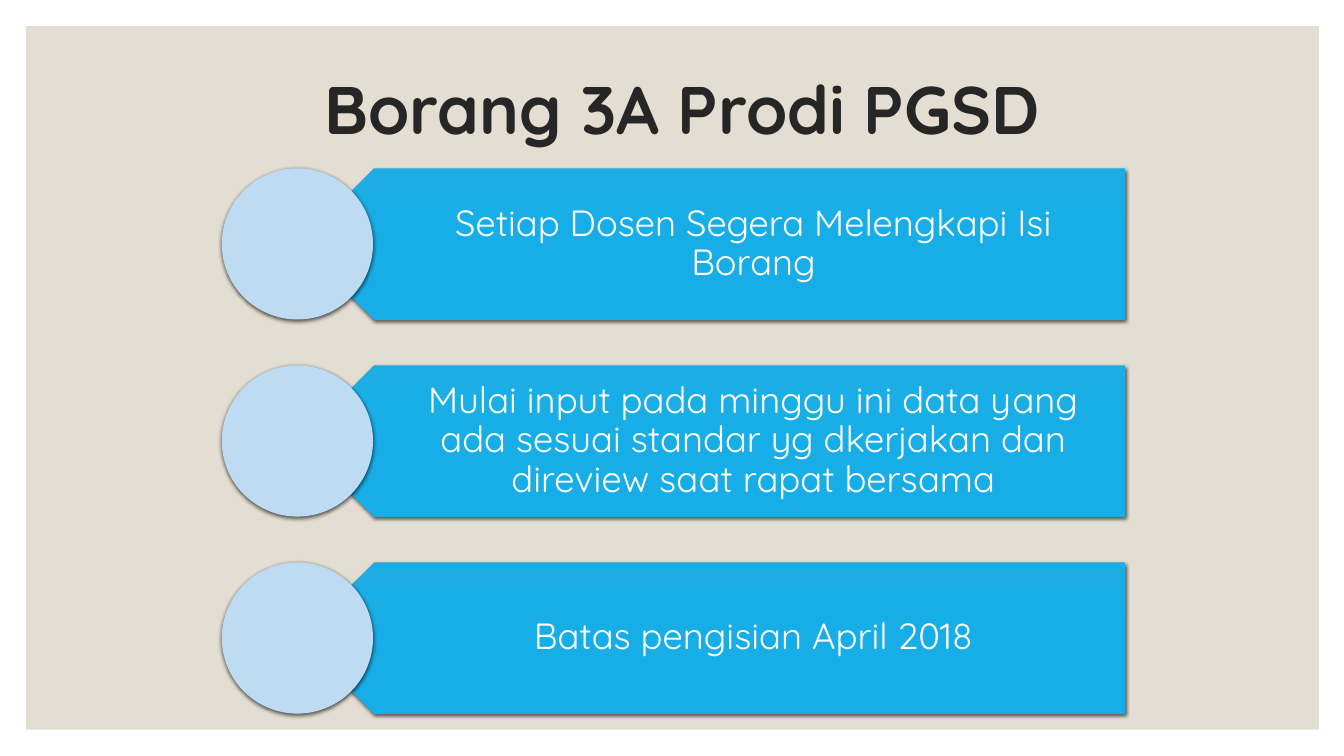
from dataclasses import dataclass

from lxml.etree import SubElement
from pptx import Presentation
from pptx.dml.color import RGBColor
from pptx.enum.shapes import MSO_SHAPE
from pptx.enum.text import MSO_ANCHOR, PP_ALIGN
from pptx.oxml.ns import qn
from pptx.shapes.autoshape import Shape
from pptx.slide import Slide
from pptx.text.text import TextFrame
from pptx.util import Inches, Pt

PANEL = RGBColor(0xE3, 0xDE, 0xD1)
TITLE_INK = RGBColor(0x26, 0x26, 0x26)
BAR_TOP = RGBColor(0x1C, 0xAD, 0xE4)
BAR_BOTTOM = RGBColor(0x17, 0xAE, 0xE8)
CIRCLE = RGBColor(0xBD, 0xDB, 0xF2)
WHITE = RGBColor(0xFF, 0xFF, 0xFF)
FONT = "Quicksand"

FIRST_TOP = 1.67
ROW_PITCH = 1.955
ROW_HEIGHT = 1.5


@dataclass
class Step:
    row: int
    text: str

    @property
    def top(self) -> float:
        return FIRST_TOP + self.row * ROW_PITCH


STEPS = [
    Step(0, "Setiap Dosen Segera Melengkapi Isi Borang"),
    Step(1, "Mulai input pada minggu ini data yang ada sesuai standar yg "
            "dkerjakan dan direview saat rapat bersama"),
    Step(2, "Batas pengisian April 2018"),
]


def add_plain_shape(page: Slide, kind: MSO_SHAPE, left: float, top: float,
                    width: float, height: float) -> Shape:
    shape = page.shapes.add_shape(kind, Inches(left), Inches(top),
                                  Inches(width), Inches(height))
    shape.shadow.inherit = False
    shape.line.fill.background()
    return shape


def add_drop_shadow(shape: Shape) -> None:
    effects = shape._element.spPr.find(qn("a:effectLst"))
    shadow = SubElement(effects, qn("a:outerShdw"), blurRad=str(Pt(3)),
                        dist=str(Pt(1)), dir="5400000", rotWithShape="0")
    color = SubElement(shadow, qn("a:srgbClr"), val="000000")
    SubElement(color, qn("a:alpha"), val="63000")


def write_centred(frame: TextFrame, text: str, size: int, color: RGBColor,
                  bold: bool = False) -> None:
    frame.word_wrap = True
    frame.vertical_anchor = MSO_ANCHOR.MIDDLE
    para = frame.paragraphs[0]
    para.alignment = PP_ALIGN.CENTER
    para.line_spacing = 0.9
    span = para.add_run()
    span.text = text
    span.font.name = FONT
    span.font.size = Pt(size)
    span.font.bold = bold
    span.font.color.rgb = color


def add_panel(page: Slide) -> None:
    """Add the beige panel behind everything else."""
    panel = add_plain_shape(page, MSO_SHAPE.RECTANGLE, 0.26, 0.26, 12.82, 6.98)
    panel.fill.solid()
    panel.fill.fore_color.rgb = PANEL
    page.shapes._spTree.insert(2, panel._element)


def add_title(page: Slide) -> None:
    title = page.shapes.title
    title.left, title.top = Inches(1.17), Inches(0.7)
    title.width, title.height = Inches(11), Inches(0.83)
    write_centred(title.text_frame, " Borang 3A Prodi PGSD", 48, TITLE_INK, bold=True)


def add_step(page: Slide, step: Step) -> None:
    bar = add_plain_shape(page, MSO_SHAPE.PENTAGON, 2.96, step.top, 8.2, ROW_HEIGHT)
    bar.rotation = 180
    bar.fill.gradient()
    bar.fill.gradient_angle = 270
    bar._element.spPr.find(qn("a:gradFill")).set("rotWithShape", "0")
    start, end = bar.fill.gradient_stops
    start.position, start.color.rgb = 0, BAR_TOP
    end.position, end.color.rgb = 0.5, BAR_BOTTOM
    add_drop_shadow(bar)

    box = page.shapes.add_textbox(Inches(3.33), Inches(step.top),
                                  Inches(7.83), Inches(ROW_HEIGHT))
    frame = box.text_frame
    frame.margin_left, frame.margin_right = Inches(0.66), Inches(0.2)
    frame.margin_top = frame.margin_bottom = Inches(0.11)
    write_centred(frame, step.text, 26, WHITE)

    circle = add_plain_shape(page, MSO_SHAPE.OVAL, 2.2, step.top, ROW_HEIGHT, ROW_HEIGHT)
    circle.fill.solid()
    circle.fill.fore_color.rgb = CIRCLE
    add_drop_shadow(circle)


def main() -> None:
    deck = Presentation()
    deck.slide_width, deck.slide_height = Inches(13.33), Inches(7.5)
    page = deck.slides.add_slide(deck.slide_layouts[5])
    add_panel(page)
    add_title(page)
    for step in STEPS:
        add_step(page, step)
    deck.save("out.pptx")


if __name__ == "__main__":
    main()
